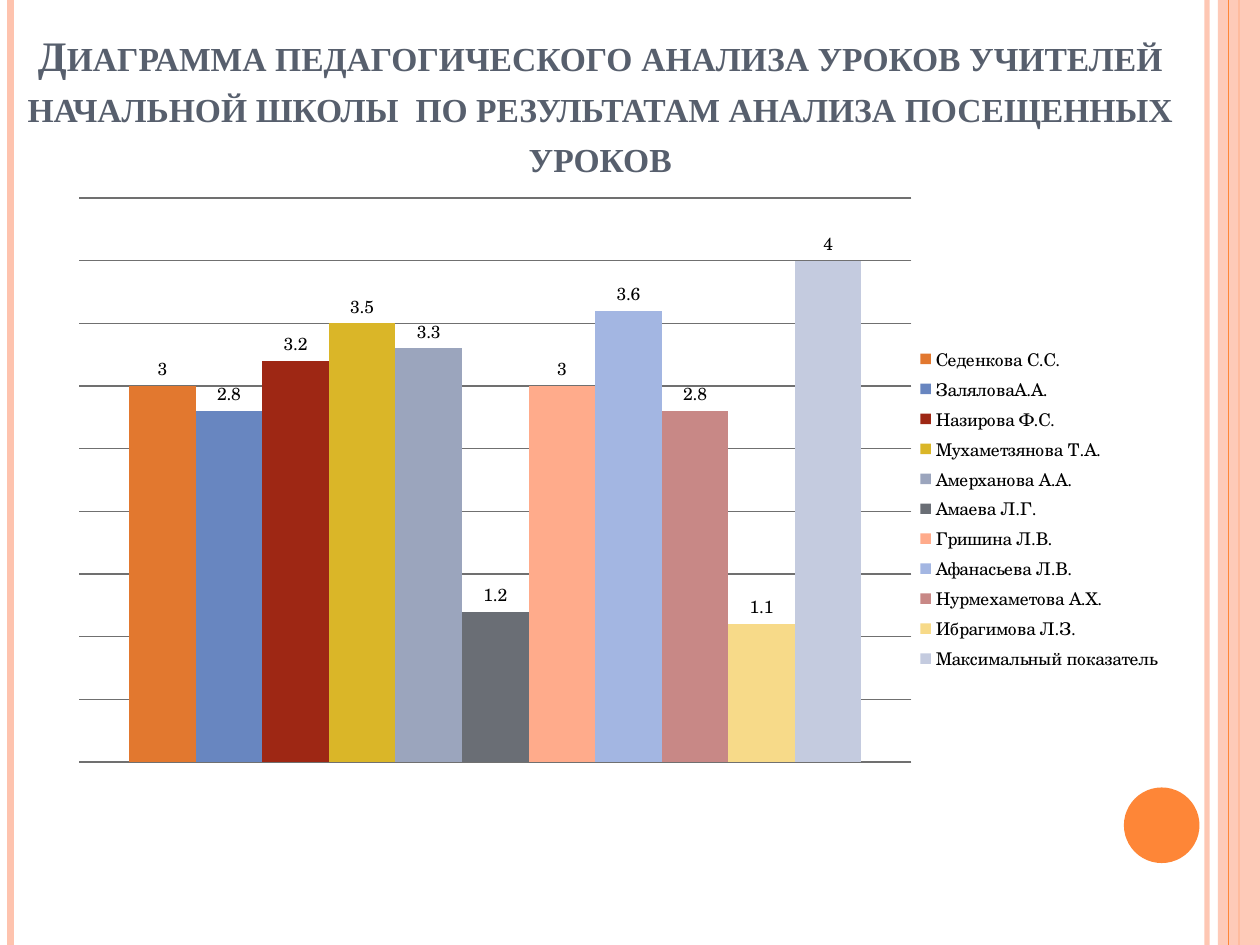
from lxml.etree import SubElement
from pptx import Presentation
from pptx.chart.data import CategoryChartData
from pptx.dml.color import RGBColor
from pptx.enum.chart import XL_CHART_TYPE as ChartType, XL_LABEL_POSITION as LabelPosition
from pptx.enum.chart import XL_LEGEND_POSITION as LegendPosition
from pptx.enum.shapes import MSO_CONNECTOR as Connector, MSO_SHAPE as Shape
from pptx.enum.text import MSO_ANCHOR as Anchor, PP_ALIGN as Align
from pptx.oxml import parse_xml
from pptx.oxml.ns import nsdecls, qn
from pptx.util import Pt

PEACH = RGBColor(0xFE, 0xC3, 0xAE)
ORANGE = RGBColor(0xFE, 0x86, 0x37)
SLATE = RGBColor(0x57, 0x5F, 0x6D)
GRID = RGBColor(0x70, 0x70, 0x70)
BLACK = RGBColor(0, 0, 0)

TITLE = ("Диаграмма педагогического анализа уроков учителей начальной школы  "
         "по результатам анализа посещенных уроков")
SCORES = [
    ("Седенкова С.С.", 3, RGBColor(0xE2, 0x78, 0x2F)),
    ("ЗаляловаА.А.", 2.8, RGBColor(0x68, 0x86, 0xC0)),
    ("Назирова Ф.С.", 3.2, RGBColor(0x9E, 0x27, 0x14)),
    ("Мухаметзянова Т.А.", 3.5, RGBColor(0xDA, 0xB6, 0x28)),
    ("Амерханова А.А.", 3.3, RGBColor(0x9B, 0xA5, 0xBD)),
    ("Амаева Л.Г.", 1.2, RGBColor(0x6A, 0x6E, 0x75)),
    ("Гришина Л.В.", 3, RGBColor(0xFF, 0xAB, 0x8B)),
    ("Афанасьева Л.В.", 3.6, RGBColor(0xA3, 0xB6, 0xE2)),
    ("Нурмехаметова А.Х.", 2.8, RGBColor(0xC8, 0x88, 0x86)),
    ("Ибрагимова Л.З.", 1.1, RGBColor(0xF7, 0xDA, 0x89)),
    ("Максимальный показатель", 4, RGBColor(0xC4, 0xCB, 0xDF)),
]


def set_alpha(shape, percent):
    """Make the first colour of a shape partly transparent."""
    color = next(shape.element.spPr.iter(qn("a:srgbClr")))
    SubElement(color, qn("a:alpha")).set("val", str(percent * 1000))


def add_stripe(page, x, top, height, color, weight):
    """Draw a vertical line and return it."""
    stripe = page.shapes.add_connector(Connector.STRAIGHT, x, top, x, top + height)
    stripe.line.color.rgb = color
    stripe.line.width = Pt(weight)
    SubElement(stripe.element.spPr, qn("a:effectLst"))
    return stripe


def add_solid(page, kind, left, top, width, height, color):
    """Draw a filled shape without outline and return it."""
    solid = page.shapes.add_shape(kind, left, top, width, height)
    solid.shadow.inherit = False
    solid.fill.solid()
    solid.fill.fore_color.rgb = color
    solid.line.fill.background()
    return solid


def add_frame(page, left, top, width, height):
    """Draw the stripes, the right band and the disc."""
    right = left + width
    set_alpha(add_stripe(page, right - Pt(30.24), top, height, PEACH, 3), 93)
    add_stripe(page, left + Pt(6), top, height, PEACH, 4.5)
    add_stripe(page, right - Pt(12), top, height, ORANGE, 1.5)
    band = add_solid(page, Shape.RECTANGLE, right - Pt(24), top, Pt(24), height, PEACH)
    set_alpha(band, 87)
    add_stripe(page, right - Pt(18), top, height, ORANGE, 0.75)
    add_solid(page, Shape.OVAL, right - Pt(77.76), top + Pt(450), Pt(43.2), Pt(43.2), ORANGE)


def add_title(page, left, top, width, height):
    """Write the heading in small capitals, standing on the box's bottom."""
    box = page.shapes.add_textbox(left, top, width, height)
    frame = box.text_frame
    frame.word_wrap = True
    frame.vertical_anchor = Anchor.BOTTOM
    para = frame.paragraphs[0]
    para.alignment = Align.CENTER
    span = para.add_run()
    span.text = TITLE
    span.font.name = "Times New Roman"
    span.font.size = Pt(24)
    span.font.bold = True
    span.font.color.rgb = SLATE
    span.font._element.set("cap", "small")


def set_plot_layout(chart, x, y, width, height):
    """Fix the inner plot area as fractions of the chart."""
    plot_area = chart._chartSpace.chart.plotArea
    for old in plot_area.findall(qn("c:layout")):
        plot_area.remove(old)
    plot_area.insert(0, parse_xml(
        f'<c:layout {nsdecls("c")}><c:manualLayout><c:layoutTarget val="inner"/>'
        '<c:xMode val="edge"/><c:yMode val="edge"/>'
        f'<c:x val="{x}"/><c:y val="{y}"/><c:w val="{width}"/><c:h val="{height}"/>'
        '</c:manualLayout></c:layout>'))


def add_score_chart(page, left, top, width, height):
    """Plot one column per teacher with values and a legend."""
    data = CategoryChartData()
    data.categories = ["1"]
    for name, score, _ in SCORES:
        data.add_series(name, [score])
    chart = page.shapes.add_chart(
        ChartType.COLUMN_CLUSTERED, left, top, width, height, data).chart
    chart.has_title = False
    chart.font.name = "TeX Gyre Schola"
    chart.font.size = Pt(10)
    chart.font.color.rgb = BLACK
    chart.has_legend = True
    chart.legend.position = LegendPosition.RIGHT
    chart.legend.include_in_layout = True
    chart.category_axis.visible = False
    axis = chart.value_axis
    axis.visible = False
    axis.minimum_scale, axis.maximum_scale, axis.major_unit = 0, 4.5, 0.5
    axis.has_major_gridlines = True
    axis.major_gridlines.format.line.color.rgb = GRID
    axis.major_gridlines.format.line.width = Pt(0.75)
    plot = chart.plots[0]
    plot.gap_width, plot.overlap = 150, 0
    plot.vary_by_categories = False
    plot.has_data_labels = True
    plot.data_labels.show_value = True
    plot.data_labels.position = LabelPosition.OUTSIDE_END
    for series, (_, _, color) in zip(plot.series, SCORES):
        series.format.fill.solid()
        series.format.fill.fore_color.rgb = color
    set_plot_layout(chart, 0.035, 0.002, 0.734, 0.904)


def main():
    """Build the slide and save it."""
    deck = Presentation()
    deck.slide_width, deck.slide_height = Pt(720), Pt(540)
    page = deck.slides.add_slide(deck.slide_layouts[6])
    add_frame(page, 0, 0, deck.slide_width, deck.slide_height)
    add_title(page, 0, Pt(17), Pt(686), Pt(90))
    add_score_chart(page, Pt(22.5), Pt(112.5), Pt(648), Pt(356.5))
    deck.save("out.pptx")


if __name__ == "__main__":
    main()
